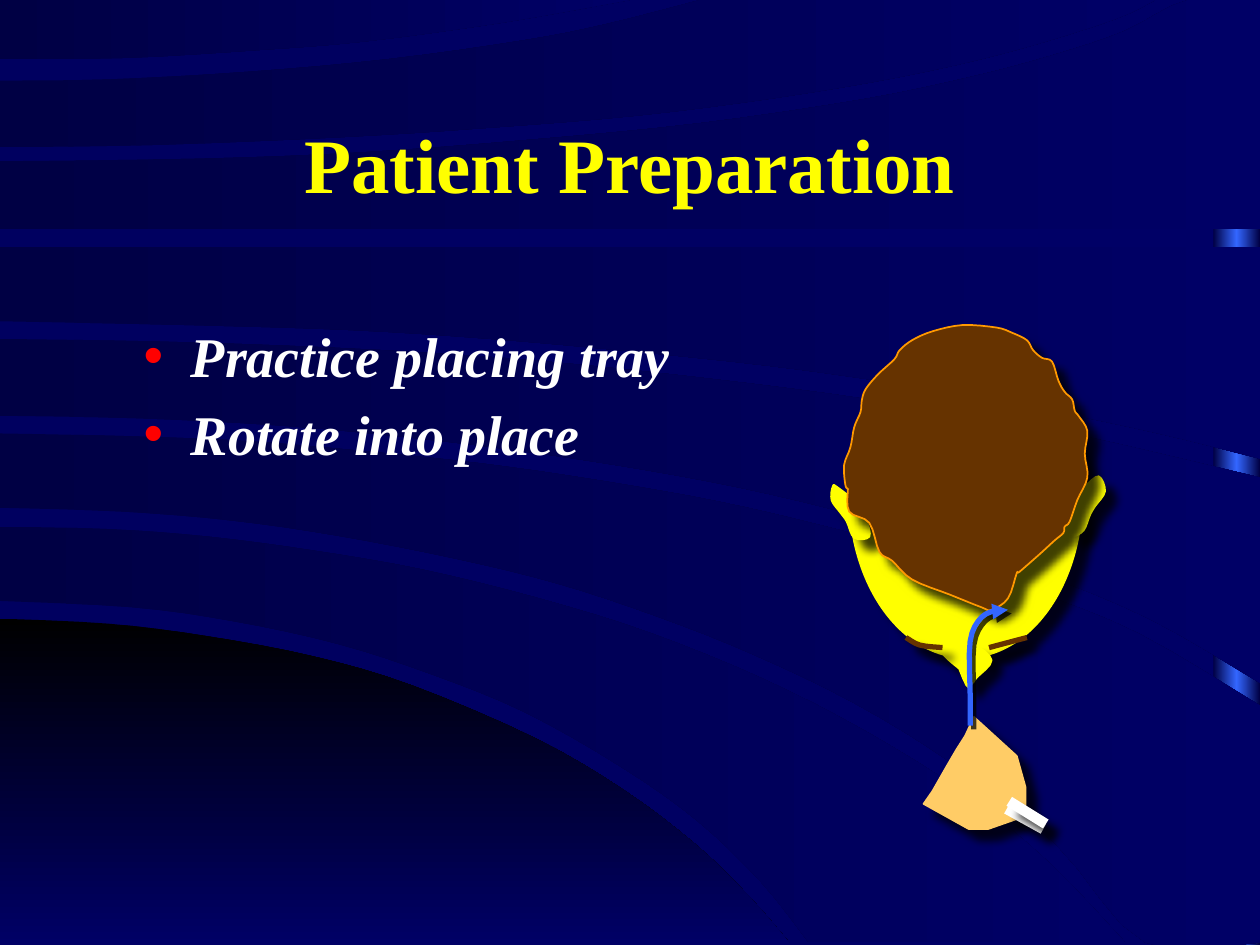
from copy import deepcopy

from lxml import etree
from pptx import Presentation, util as u
from pptx.dml import color
from pptx.enum import shapes, text
from pptx.oxml import ns

FONT = "Times New Roman"
NAVY, BLUE = "000044", "000066"
SKIN, HAIR, TRAY = "FFFF00", "663300", "FFCC66"

BANDS = [
    ([(0, 4.18), (0.87, 4.2), (1.66, 4.26), (2.49, 4.37), (3.35, 4.52), (4.28, 4.75),
      (5.15, 5.02), (6.06, 5.39), (6.88, 5.81), (7.66, 6.3), (8.33, 6.85), (8.93, 7.48)],
     [(0, 4.77), (1.05, 4.82), (1.85, 4.93), (2.68, 5.11), (3.42, 5.35), (4.16, 5.65),
      (4.92, 6.08), (5.53, 6.51), (6.04, 7), (6.42, 7.48)]),
    ([(0, 3.44), (0.97, 3.46), (1.95, 3.5), (2.89, 3.58), (3.84, 3.68), (4.74, 3.81),
      (5.7, 3.98), (6.56, 4.18), (7.38, 4.4), (8.18, 4.68), (9.04, 5.03), (10, 5.6)],
     [(0, 4.03), (0.97, 4.06), (1.83, 4.13), (2.67, 4.25), (3.6, 4.43), (4.42, 4.63),
      (5.21, 4.89), (5.97, 5.19), (6.78, 5.58), (7.56, 6.06), (8.38, 6.7), (9.09, 7.48),
      (10, 7.48)]),
    ([(0, 2.69), (1.24, 2.71), (2.65, 2.76), (3.99, 2.84), (5.23, 2.96), (6.62, 3.13),
      (7.68, 3.3), (8.59, 3.46), (10, 3.79)],
     [(0, 3.3), (1.09, 3.32), (2.11, 3.37), (3.03, 3.45), (4.06, 3.57), (5.12, 3.73),
      (6.1, 3.92), (7.11, 4.18), (8.17, 4.52), (9.12, 4.91), (10, 5.42)]),
    ([(0, 1.96), (10, 1.96)],
     [(0, 2.55), (1.47, 2.58), (2.78, 2.62), (3.89, 2.69), (5.02, 2.79), (6.07, 2.9),
      (7.02, 3.03), (8.13, 3.22), (9.15, 3.43), (10, 3.64)]),
    ([(0, 1.28), (1.57, 1.26), (2.86, 1.21), (4.2, 1.11), (5.54, 0.98), (6.84, 0.79),
      (7.71, 0.61), (8.35, 0.44), (8.92, 0.25), (9.43, 0), (10, 0)],
     [(0, 1.82), (10, 1.82)]),
    ([(0, 0.64), (0.87, 0.63), (1.97, 0.57), (3.08, 0.47), (4.16, 0.32), (4.82, 0.19),
      (5.56, 0)],
     [(0, 1.17), (1.26, 1.15), (2.7, 1.09), (3.81, 1.02), (5.04, 0.92), (6.14, 0.78),
      (7.15, 0.61), (8.02, 0.41), (8.83, 0.16), (9.17, 0)]),
    ([(0, 0), (5, 0)],
     [(0, 0.47), (1.01, 0.46), (2.02, 0.4), (2.89, 0.33), (3.99, 0.18), (5, 0)]),
]
HILL = [(0, 4.91), (0.86, 4.95), (1.65, 5.05), (2.49, 5.21), (3.27, 5.44), (4.25, 5.86),
        (4.95, 6.27), (5.53, 6.71), (5.96, 7.13), (6.28, 7.5)]

NOSE = [(7.56, 5.17), (7.67, 5.44), (7.72, 5.42), (7.75, 5.38), (7.87, 5.24), (7.72, 5.12),
        (7.51, 5.17), (7.5, 5.21), (7.64, 5.33)]
RIGHT_EAR = [(8.62, 3.85), (8.72, 3.78), (8.77, 3.9), (8.69, 4.02), (8.65, 4.09), (8.6, 4.21),
             (8.51, 4.26), (8.49, 4.21), (8.55, 3.93), (8.56, 3.88), (8.62, 3.85)]
LEFT_EAR = [(6.88, 4.13), (6.9, 4.26), (6.78, 4.27), (6.72, 4.14), (6.67, 4.07), (6.6, 3.97),
            (6.61, 3.86), (6.65, 3.87), (6.86, 4.03), (6.89, 4.05), (6.88, 4.13)]
HAIRLINE = [(6.73, 3.88), (6.74, 4.06), (6.9, 4.15), (6.98, 4.38), (7.08, 4.45), (7.24, 4.6),
            (7.54, 4.72), (7.79, 4.82), (7.87, 4.84), (8.0, 4.75), (8.07, 4.55), (8.09, 4.54),
            (8.25, 4.4), (8.37, 4.29), (8.44, 4.23), (8.45, 4.18), (8.49, 4.14), (8.55, 3.97),
            (8.63, 3.79), (8.61, 3.6), (8.63, 3.42), (8.56, 3.3), (8.53, 3.26), (8.51, 3.17),
            (8.45, 3.11), (8.4, 3.02), (8.35, 2.87), (8.27, 2.84), (8.2, 2.78), (8.15, 2.7),
            (8.03, 2.64), (7.91, 2.6), (7.64, 2.58), (7.4, 2.63), (7.24, 2.7), (7.14, 2.78),
            (7.1, 2.85), (6.97, 2.97), (6.87, 3.09), (6.84, 3.18), (6.83, 3.27), (6.78, 3.39),
            (6.75, 3.55), (6.7, 3.69), (6.71, 3.85), (6.73, 3.88)]
BROWS = [[(7.85, 5.14), (8.15, 5.06)], [(7.48, 5.14), (7.3, 5.12), (7.19, 5.06)]]
TRAY_EDGE = [(7.4, 6.28), (7.52, 6.07), (7.59, 5.95), (7.66, 5.84), (7.73, 5.69), (8.07, 6),
             (8.14, 6.25), (8.14, 6.42), (8.07, 6.5), (7.84, 6.58), (7.69, 6.58), (7.33, 6.38)]
HANDLES = [((7.99, 6.42), (8.28, 6.58)), ((8.01, 6.36), (8.3, 6.54))]
ROTATION = [(7.7, 5.76), (7.7, 5.51), (7.7, 5.09), (7.79, 4.9), (7.93, 4.84), (8, 4.84)]


def rgb(value):
    """Return the colour of a hex string."""
    return color.RGBColor.from_string(value)


def smooth(points, steps=4):
    """Return points on a curve that passes through all the given points."""
    knots = [points[0], *points, points[-1]]
    curve = [points[0]]
    for a, b, c, d in zip(knots, knots[1:], knots[2:], knots[3:]):
        for t in (step / steps for step in range(1, steps + 1)):
            curve.append(tuple(
                q + t * (r - p + t * (2 * p - 5 * q + 4 * r - s + t * (3 * q - p - 3 * r + s))) / 2
                for p, q, r, s in zip(a, b, c, d)))
    return curve


def outline(parent, points, close=True):
    """Build a freeform through points given in inches."""
    first, *rest = [(u.Inches(x), u.Inches(y)) for x, y in points]
    builder = parent.build_freeform(*first)
    builder.add_line_segments(rest, close=close)
    shape = builder.convert_to_shape()
    shape.shadow.inherit = False
    return shape


def blend(fill, start, end, angle=0):
    """Give a fill a two-colour gradient."""
    fill.gradient()
    fill.gradient_angle = angle
    for stop, value in zip(fill.gradient_stops, (start, end)):
        stop.color.rgb = rgb(value)


def add_shadow(properties, blur=5, distance=8.5):
    """Return an effect list with a black shadow, placed in the properties."""
    effects = properties.find(ns.qn("a:effectLst"))
    if effects is None:
        effects = etree.SubElement(properties, ns.qn("a:effectLst"))
    shadow = etree.SubElement(effects, ns.qn("a:outerShdw"), blurRad=str(u.Pt(blur)),
                              dist=str(u.Pt(distance)), dir="2700000", algn="ctr", rotWithShape="0")
    black = etree.SubElement(shadow, ns.qn("a:srgbClr"), val="000000")
    etree.SubElement(black, ns.qn("a:alpha"), val="75000")
    return effects


def style(shape, line, width=1, fill=None, **shadow):
    """Set the line, the fill and the shadow of a drawn part."""
    shape.line.color.rgb = rgb(line)
    shape.line.width = u.Pt(width)
    if fill:
        shape.fill.solid()
        shape.fill.fore_color.rgb = rgb(fill)
    elif hasattr(shape, "fill"):
        shape.fill.background()
    add_shadow(shape._element.spPr, **shadow)


def add_backdrop(page):
    """Draw the side bar, the dark hill and the curved bands."""
    blend(page.background.fill, "000060", BLUE)
    bar = page.shapes.add_shape(shapes.MSO_SHAPE.RECTANGLE, u.Inches(9.63), 0,
                                u.Inches(0.37), u.Inches(7.5))
    bar.shadow.inherit = False
    blend(bar.fill, NAVY, "3366FF")
    stops = bar._element.spPr.find(".//" + ns.qn("a:gsLst"))
    stops[1].set("pos", "50000")
    stops.append(deepcopy(stops[0]))
    stops[2].set("pos", "100000")
    bar.line.fill.background()
    hill = outline(page.shapes, smooth(HILL) + [(0, 7.5)])
    blend(hill.fill, "000000", BLUE, 270)
    hill.line.fill.background()
    for top, bottom in BANDS:
        band = outline(page.shapes, smooth(top) + smooth(bottom)[::-1])
        blend(band.fill, NAVY, BLUE)
        band.line.fill.background()


def add_span(para, words, size, value, italic=False):
    """Add a bold run with a text shadow."""
    span = para.add_run()
    span.text = words
    font = span.font
    font.size, font.bold, font.italic = u.Pt(size), True, italic
    font.color.rgb = rgb(value)
    properties = span._r.get_or_add_rPr()
    properties.find(ns.qn("a:solidFill")).addnext(add_shadow(properties, 0, 3))
    font.name = FONT


def place(page, box, left, top, width, height):
    """Move a placeholder and bring it in front of the backdrop."""
    box.left, box.top, box.width, box.height = map(u.Inches, (left, top, width, height))
    page.shapes._spTree.append(box._element)
    return box.text_frame


def add_texts(page):
    """Fill the title and the bulleted list."""
    title = place(page, page.shapes.title, 0.75, 0.67, 8.5, 1.25)
    title.vertical_anchor = text.MSO_ANCHOR.MIDDLE
    title.paragraphs[0].alignment = text.PP_ALIGN.CENTER
    add_span(title.paragraphs[0], "Patient Preparation", 44, "FFFF00")
    body = place(page, page.placeholders[1], 1.04, 2.5, 6.9, 3.79)
    for index, words in enumerate(("Practice placing tray", "Rotate into place")):
        para = body.add_paragraph() if index else body.paragraphs[0]
        bullet = etree.SubElement(para._p.get_or_add_pPr(), ns.qn("a:buClr"))
        etree.SubElement(bullet, ns.qn("a:srgbClr"), val="FF0000")
        add_span(para, words, 32, "FFFFFF", italic=True)


def add_head(parent):
    """Draw the head seen from above."""
    face = parent.add_shape(shapes.MSO_SHAPE.OVAL, u.Inches(6.74), u.Inches(2.64),
                            u.Inches(1.85), u.Inches(2.58))
    style(face, SKIN, fill=SKIN)
    for part in (NOSE, RIGHT_EAR, LEFT_EAR):
        style(outline(parent, smooth(part)), SKIN, fill=SKIN)
    style(outline(parent, smooth(HAIRLINE)), "FF9900", fill=HAIR)
    for brow in BROWS:
        style(outline(parent, smooth(brow), close=False), HAIR, 3)


def add_tray(parent):
    """Draw the tray, its handle and the arrow that turns it into place."""
    style(outline(parent, TRAY_EDGE), TRAY, fill=TRAY)
    for start, end in HANDLES:
        handle = parent.add_connector(shapes.MSO_CONNECTOR.STRAIGHT,
                                      *map(u.Inches, (*start, *end)))
        style(handle, "FFFFFF", 6)
    arrow = outline(parent, smooth(ROTATION), close=False)
    style(arrow, "3366FF", 3, blur=0, distance=3)
    etree.SubElement(arrow.line._get_or_add_ln(), ns.qn("a:tailEnd"), type="triangle")


def main():
    """Build and save the deck."""
    deck = Presentation()
    deck.slide_width, deck.slide_height = u.Inches(10), u.Inches(7.5)
    page = deck.slides.add_slide(deck.slide_layouts[1])
    add_backdrop(page)
    add_texts(page)
    drawing = page.shapes.add_group_shape().shapes
    add_head(drawing)
    add_tray(drawing)
    deck.save("out.pptx")


if __name__ == "__main__":
    main()
